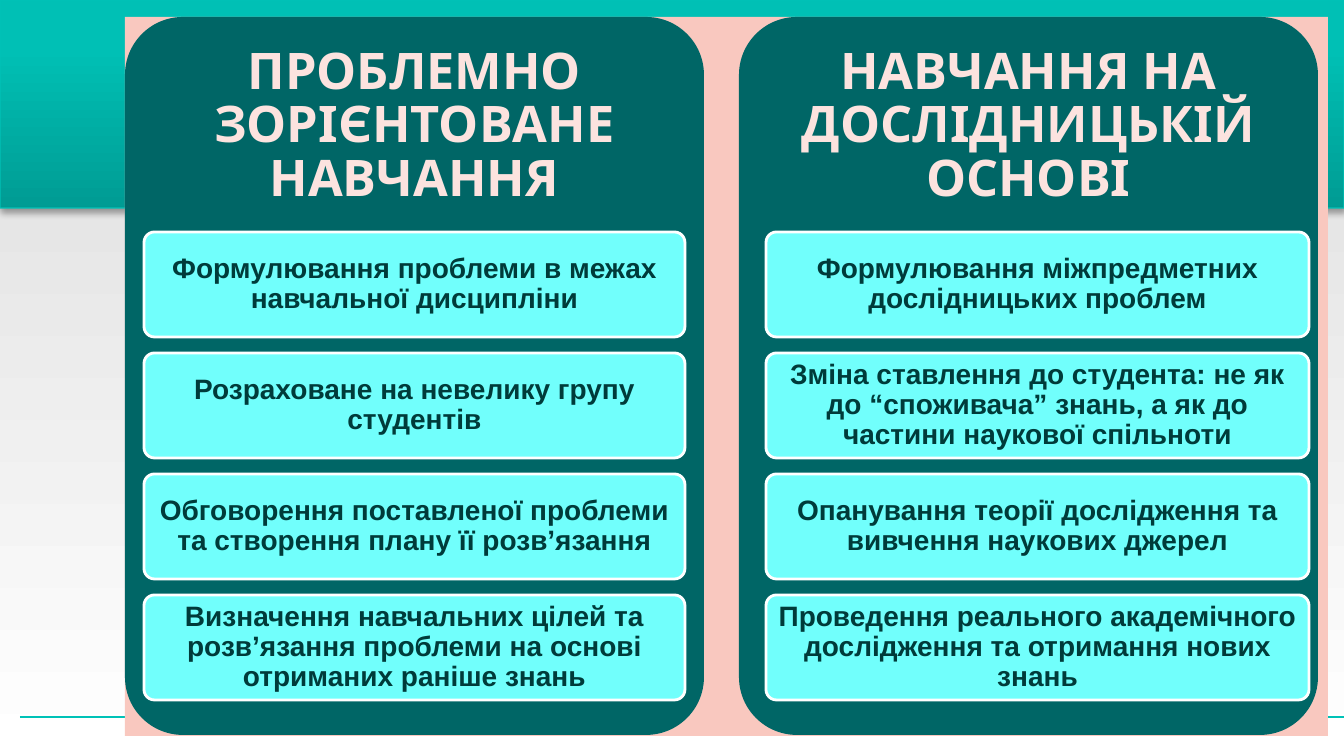
from copy import deepcopy

from lxml.etree import SubElement
from pptx import Presentation
from pptx.dml.color import RGBColor
from pptx.enum.shapes import MSO_CONNECTOR, MSO_SHAPE
from pptx.enum.text import MSO_ANCHOR, PP_ALIGN
from pptx.oxml.ns import qn
from pptx.util import Pt

PX = 914400 / 100.8
THEME = {
    "background": [(0, "DBDBDB"), (1, "FFFFFF")],
    "header": [(0, "00948C"), (0.8, "00C0B5"), (1, "00C1B6")],
    "accent": "00C2B7",
    "panel": "F9C8BF",
    "column": "006666",
    "card": "71FFFC",
    "card_line": "FFFFFF",
    "heading": {"name": "League Spartan", "size": 36, "color": "FCE3DF", "spacing": 0.88},
    "body": {"name": "Arial", "size": 20, "color": "003B3A", "spacing": 0.9},
}
COLUMNS = [
    {
        "left": 125, "card_left": 144, "card_width": 541,
        "heading": ["ПРОБЛЕМНО", "ЗОРІЄНТОВАНЕ НАВЧАННЯ"],
        "cards": [
            "Формулювання проблеми в межах навчальної дисципліни",
            "Розраховане на невелику групу студентів",
            "Обговорення поставленої проблеми та створення плану її розв’язання",
            "Визначення навчальних цілей та розв’язання проблеми на основі отриманих раніше знань",
        ],
    },
    {
        "left": 739, "card_left": 766, "card_width": 543,
        "heading": ["НАВЧАННЯ НА ДОСЛІДНИЦЬКІЙ ОСНОВІ"],
        "cards": [
            "Формулювання міжпредметних дослідницьких проблем",
            "Зміна ставлення до студента: не як до “споживача” знань, а як до частини наукової спільноти",
            "Опанування теорії дослідження та вивчення наукових джерел",
            "Проведення реального академічного дослідження та отримання нових знань",
        ],
    },
]


def set_gradient(fill, element, stops, angle):
    fill.gradient()
    fill.gradient_angle = angle
    stop_list = element.xpath(".//a:gsLst")[0]
    for _ in stops[2:]:
        stop_list.append(deepcopy(stop_list[0]))
    for stop, (position, color) in zip(fill.gradient_stops, stops):
        stop.position = position
        stop.color.rgb = RGBColor.from_string(color)


def add_block(kind, box, color, texts=(), style=None, insets=(0, 0, 0, 0)):
    shape = slide.shapes.add_shape(kind, *(round(value * PX) for value in box))
    shape.shadow.inherit = False
    shape.fill.solid()
    shape.fill.fore_color.rgb = RGBColor.from_string(color)
    shape.line.fill.background()
    if kind == MSO_SHAPE.ROUNDED_RECTANGLE:
        shape.adjustments[0] = 0.1
    frame = shape.text_frame
    frame.word_wrap = True
    frame.vertical_anchor = MSO_ANCHOR.MIDDLE
    for side, inset in zip(("left", "top", "right", "bottom"), insets):
        setattr(frame, f"margin_{side}", round(inset * PX))
    for index, text in enumerate(texts):
        paragraph = frame.add_paragraph() if index else frame.paragraphs[0]
        paragraph.alignment = PP_ALIGN.CENTER
        paragraph.line_spacing = style["spacing"]
        run = paragraph.add_run()
        run.text = text
        font_values = {"name": style["name"], "size": Pt(style["size"]), "bold": True}
        for name, value in font_values.items():
            setattr(run.font, name, value)
        run.font.color.rgb = RGBColor.from_string(style["color"])
    return shape


presentation = Presentation()
presentation.slide_width = round(1344 * PX)
presentation.slide_height = round(756 * PX)
slide = presentation.slides.add_slide(presentation.slide_layouts[6])
background = slide.background.fill
set_gradient(background, slide._element, THEME["background"], 270)

footer_line = slide.shapes.add_connector(
    MSO_CONNECTOR.STRAIGHT, *(round(value * PX) for value in (20, 717, 1344, 717))
)
SubElement(footer_line._element.spPr, qn("a:effectLst"))

builder = slide.shapes.build_freeform(1344, 0, scale=PX)
builder.add_line_segments(
    [(0, 0), (0, 208), (220, 208), (262, 240), (267, 241), (272, 240), (314, 208), (1344, 208)]
)
header = builder.convert_to_shape()
set_gradient(header.fill, header._element, THEME["header"], 90)
header.shadow.inherit = False
effects = header._element.spPr.find(qn("a:effectLst"))
shadow = SubElement(effects, qn("a:outerShdw"), blurRad="39370", dist="22860", dir="5400000")
shadow_color = SubElement(shadow, qn("a:srgbClr"), val="000000")
SubElement(shadow_color, qn("a:alpha"), val="35000")

for shape in (footer_line, header):
    shape.line.color.rgb = RGBColor.from_string(THEME["accent"])
    shape.line.width = Pt(0.75)

add_block(MSO_SHAPE.RECTANGLE, (125, 17, 1203, 719), THEME["panel"])

for column in COLUMNS:
    add_block(
        MSO_SHAPE.ROUNDED_RECTANGLE, (column["left"], 17, 579, 718), THEME["column"],
        column["heading"], THEME["heading"], (0, 0, 0, 498),
    )
    for row, text in enumerate(column["cards"]):
        card = add_block(
            MSO_SHAPE.ROUNDED_RECTANGLE,
            (column["card_left"], 232 + 121 * row, column["card_width"], 105),
            THEME["card"], [text], THEME["body"], (6, 4, 6, 4),
        )
        card.line.color.rgb = RGBColor.from_string(THEME["card_line"])
        card.line.width = Pt(2)

presentation.save("out.pptx")
